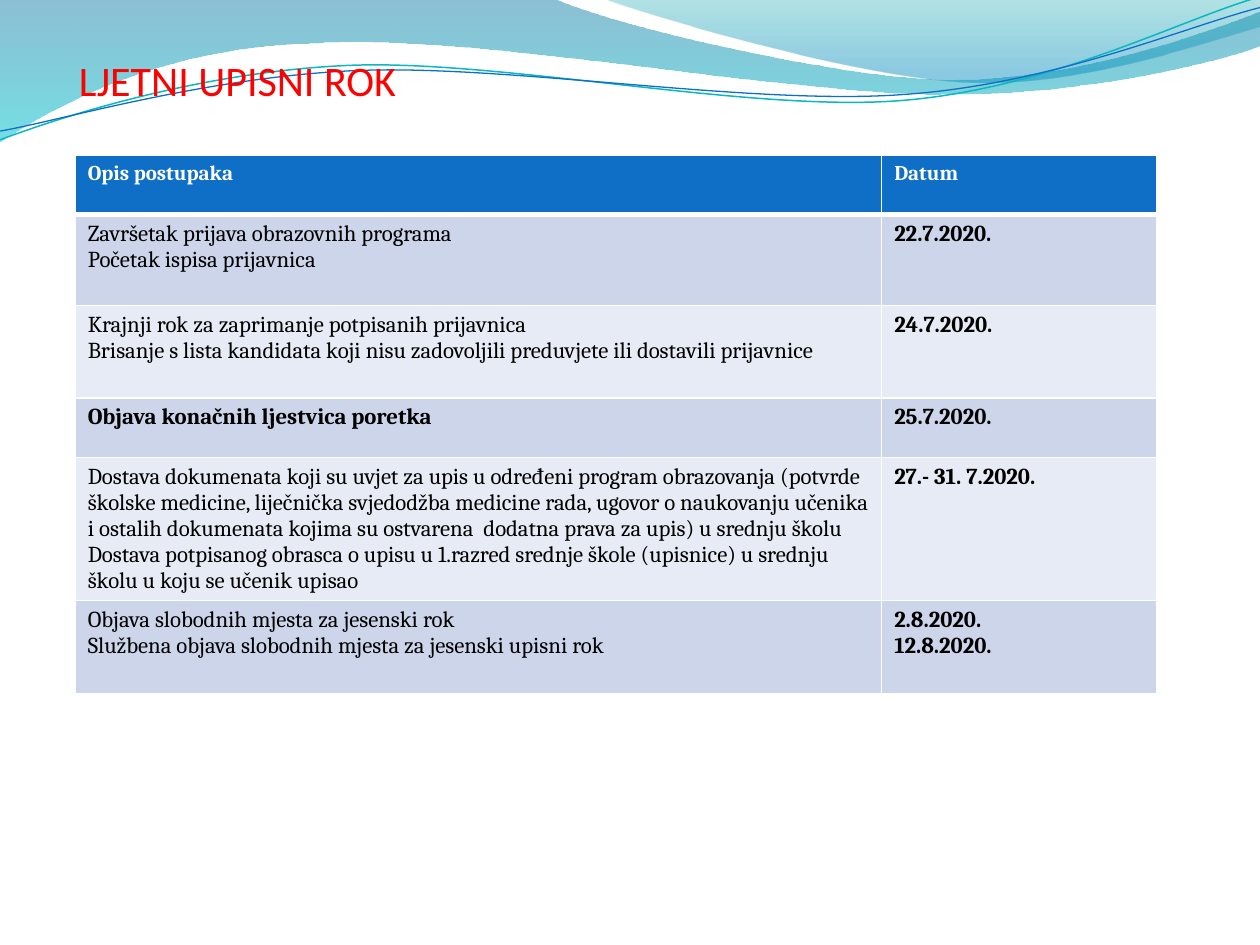
from dataclasses import dataclass

from lxml import etree
from pptx import Presentation
from pptx.dml.color import RGBColor
from pptx.enum.text import MSO_ANCHOR, PP_ALIGN
from pptx.oxml.ns import qn
from pptx.util import Pt

BOTTOM = MSO_ANCHOR.BOTTOM
LEFT = PP_ALIGN.LEFT
TITLE_ONLY = 5

Point = tuple[float, float]


@dataclass
class GradientStop:
    position: float
    color: str
    opacity: int


@dataclass
class Wave:
    """Outline whose segments hold one point (line) or three (Bézier curve)."""
    start: Point
    segments: list[list[Point]]
    stops: tuple[GradientStop, GradientStop] | None = None
    stroke: str = ""
    stroke_width: float = 0


@dataclass
class Step:
    description: list[str]
    dates: list[str]
    height: float
    emphasized: bool = False


WAVES = [
    Wave((0, 0), [
        [(316.8, -0.7)],
        [(342.7, 12.2), (478.1, 45.4), (545.8, 45.4)],
        [(614.2, 45.4), (689.8, 18.7), (720, 6.5)],
        [(720.7, 25.9)],
        [(707.8, 31.7), (626.4, 54.7), (537.1, 54)],
        [(447.8, 54), (275, 20.2), (185, 24.5)],
        [(92.9, 25.9), (33.1, 59.8), (-0.7, 81.4)],
        [(0, 0)],
    ], stops=(GradientStop(0, "0074A1", 45), GradientStop(1, "00C6CF", 55))),
    Wave((344.9, -0.7), [
        [(366.5, 7.9), (491, 44.6), (553.7, 46.8)],
        [(616.3, 49.7), (691.9, 23), (720, 15.1)],
        [(720, 0)],
        [(344.9, -0.7)],
    ], stops=(GradientStop(0, "00A1A9", 30), GradientStop(0.8, "008BBF", 45))),
    Wave((0, 79.9), [
        [(34.6, 67), (113.8, 41), (199.4, 37.4)],
        [(284.4, 33.8), (427, 64.1), (513.4, 57.6)],
        [(599.8, 51.1), (675.4, 10.8), (718.6, -1.4)],
    ], stroke="0AB8BF", stroke_width=0.85),
    Wave((0, 74.9), [
        [(33.8, 69.1), (118.1, 43.9), (203.8, 40.3)],
        [(290.2, 36.7), (429.8, 60.5), (516.2, 54)],
        [(601.9, 48.2), (677.5, 15.1), (720, 4.3)],
    ], stroke="0F6FC6", stroke_width=0.75),
]

HEADER = Step(["Opis postupaka"], ["Datum"], 33.9, True)
STEPS = [
    Step(["Završetak prijava obrazovnih programa", "Početak ispisa prijavnica"],
         ["22.7.2020."], 51.9),
    Step(["Krajnji rok za zaprimanje potpisanih prijavnica",
          "Brisanje s lista kandidata koji nisu zadovoljili preduvjete ili "
          "dostavili prijavnice"],
         ["24.7.2020."], 53),
    Step(["Objava konačnih ljestvica poretka"], ["25.7.2020."], 34, True),
    Step(["Dostava dokumenata koji su uvjet za upis u određeni program obrazovanja "
          "(potvrde školske medicine, liječnička svjedodžba medicine rada, ugovor o "
          "naukovanju učenika i ostalih dokumenata kojima su ostvarena  dodatna prava "
          "za upis) u srednju školu",
          "Dostava potpisanog obrasca o upisu u 1.razred srednje škole (upisnice) u "
          "srednju školu u koju se učenik upisao"],
         ["27.- 31. 7.2020."], 81.5),
    Step(["Objava slobodnih mjesta za jesenski rok",
          "Službena objava slobodnih mjesta za jesenski upisni rok"],
         ["2.8.2020.", "12.8.2020."], 53),
]
COLUMN_WIDTHS = (460.8, 157)
BAND_FILLS = ("CCD5EA", "E7EBF5")


def rgb(color: str) -> RGBColor:
    return RGBColor.from_string(color)


def bend_segments(shape, segments: list[list[Point]]) -> None:
    """Join the line steps of each three-point segment into one Bézier curve."""
    steps = iter(list(shape.element.spPr.iter(qn("a:lnTo"))))
    for segment in segments:
        first, *others = [next(steps) for _ in segment]
        if not others:
            continue
        curve = etree.Element(qn("a:cubicBezTo"))
        first.addprevious(curve)
        for step in (first, *others):
            curve.append(step[0])
            step.getparent().remove(step)


def draw_wave(slide, wave: Wave) -> None:
    points = [wave.start, *(point for segment in wave.segments for point in segment)]
    vertices = [(Pt(x), Pt(y)) for x, y in points]
    builder = slide.shapes.build_freeform(*vertices[0])
    builder.add_line_segments(vertices[1:], close=wave.stops is not None)
    shape = builder.convert_to_shape()
    bend_segments(shape, wave.segments)
    shape.shadow.inherit = False
    if wave.stops is None:
        shape.fill.background()
        shape.line.color.rgb = rgb(wave.stroke)
        shape.line.width = Pt(wave.stroke_width)
        return
    shape.line.fill.background()
    shape.fill.gradient()
    shape.fill.gradient_angle = 270
    for target, stop in zip(shape.fill.gradient_stops, wave.stops):
        target.position = stop.position
        target.color.rgb = rgb(stop.color)
    colors = shape.element.spPr.iter(qn("a:srgbClr"))
    for color, stop in zip(list(colors), wave.stops):
        etree.SubElement(color, qn("a:alpha"), val=str(stop.opacity * 1000))


def draw_borders(cell, top: float, bottom: float) -> None:
    properties = cell._tc.get_or_add_tcPr()
    for side, width in (("L", 1), ("R", 1), ("T", top), ("B", bottom)):
        border = etree.SubElement(properties, qn(f"a:ln{side}"), w=str(Pt(width)))
        fill = etree.SubElement(border, qn("a:solidFill"))
        etree.SubElement(fill, qn("a:srgbClr"), val="FFFFFF")


def fill_cell(cell, lines: list[str], fill: str, color: str, size: float,
              bold: bool) -> None:
    cell.fill.solid()
    cell.fill.fore_color.rgb = rgb(fill)
    cell.text_frame.text = "\n".join(lines)
    for paragraph in cell.text_frame.paragraphs:
        for run in paragraph.runs:
            run.font.name = "Cambria"
            run.font.size = Pt(size)
            run.font.bold = bold
            run.font.color.rgb = rgb(color)


def draw_schedule(slide) -> None:
    rows = [HEADER, *STEPS]
    table = slide.shapes.add_table(
        len(rows), len(COLUMN_WIDTHS), Pt(43), Pt(88.8),
        Pt(sum(COLUMN_WIDTHS)), Pt(sum(row.height for row in rows))).table
    for column, width in zip(table.columns, COLUMN_WIDTHS):
        column.width = Pt(width)
    for index, step in enumerate(rows):
        table.rows[index].height = Pt(step.height)
        if index == 0:
            fill, color, size = "0F6FC6", "FFFFFF", 12
        else:
            fill, color, size = BAND_FILLS[(index - 1) % 2], "000000", 13
        description, dates = table.rows[index].cells
        for cell in (description, dates):
            draw_borders(cell, 3 if index == 1 else 1, 3 if index == 0 else 1)
        fill_cell(description, step.description, fill, color, size, step.emphasized)
        fill_cell(dates, step.dates, fill, color, size, True)


def place_title(slide) -> None:
    title = slide.shapes.title
    # The heading lies in front of the waves.
    title.element.getparent().append(title.element)
    title.left, title.top, title.width, title.height = Pt(45), Pt(26), Pt(630), Pt(34)
    frame = title.text_frame
    frame.text = "LJETNI UPISNI ROK"
    frame.vertical_anchor = BOTTOM
    frame.margin_left = frame.margin_right = frame.margin_bottom = 0
    frame.margin_top = Pt(3.6)
    heading = frame.paragraphs[0]
    heading.alignment = LEFT
    font = heading.runs[0].font
    font.name, font.size, font.color.rgb = "Calibri", Pt(24), rgb("FF0000")


def main() -> None:
    presentation = Presentation()
    presentation.slide_width, presentation.slide_height = Pt(720), Pt(540)
    slide = presentation.slides.add_slide(presentation.slide_layouts[TITLE_ONLY])
    for wave in WAVES:
        draw_wave(slide, wave)
    place_title(slide)
    draw_schedule(slide)
    presentation.save("out.pptx")


if __name__ == "__main__":
    main()
